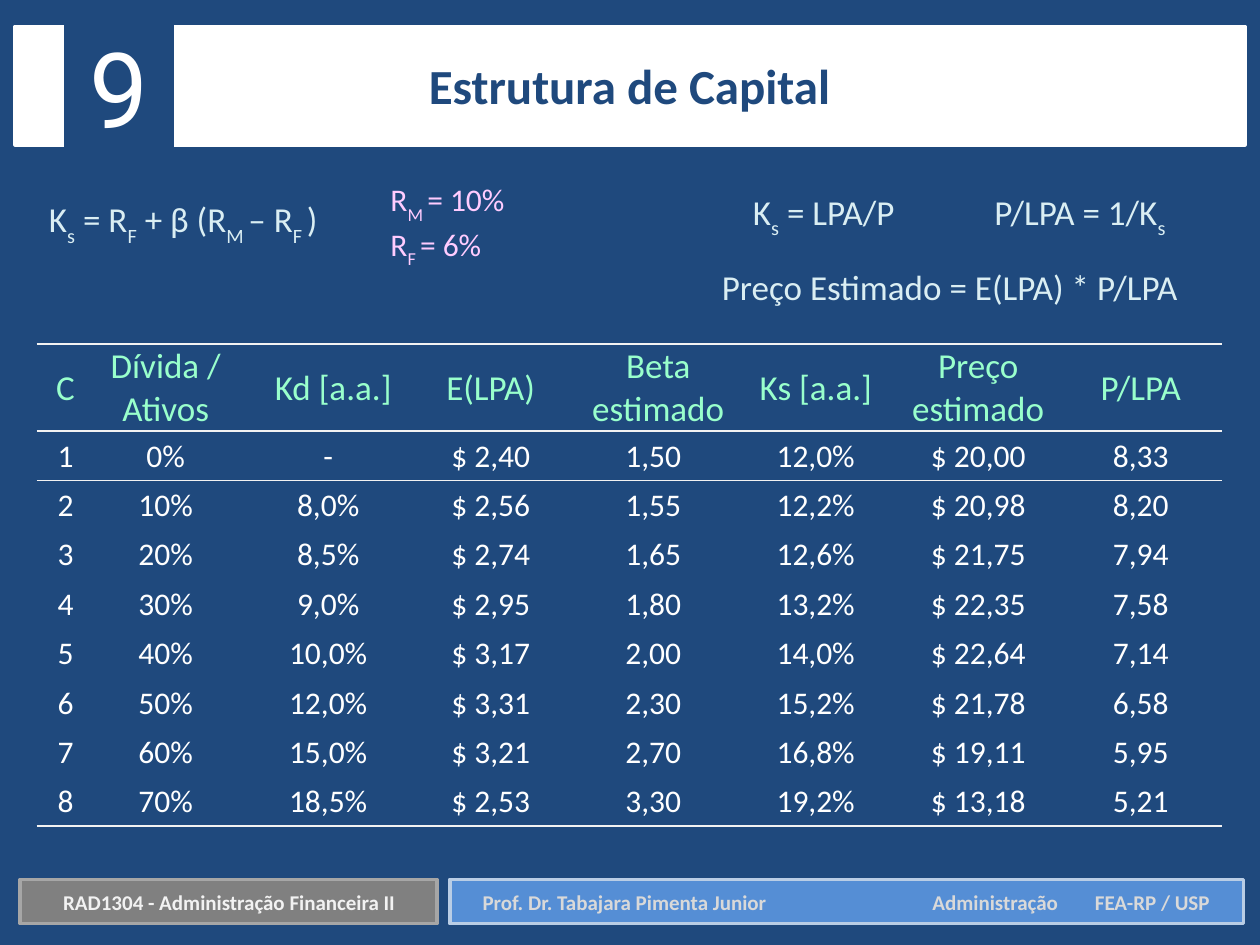
from lxml.etree import SubElement
from pptx import Presentation
from pptx.dml.color import RGBColor as RGB
from pptx.enum.shapes import MSO_SHAPE
from pptx.enum.text import MSO_ANCHOR as ANCHOR, MSO_AUTO_SIZE as AUTO, PP_ALIGN as ALIGN
from pptx.oxml import parse_xml
from pptx.oxml.ns import nsdecls, qn
from pptx.util import Inches, Pt

NAVY = RGB(0x1F, 0x49, 0x7D)
WHITE = RGB(0xFF, 0xFF, 0xFF)
OFF_WHITE = RGB(0xF2, 0xF2, 0xF2)
SILVER = RGB(0xD9, 0xD9, 0xD9)
GRAY = RGB(0x80, 0x80, 0x80)
GRAY_EDGE = RGB(0xA6, 0xA6, 0xA6)
BLUE = RGB(0x55, 0x8E, 0xD5)
BLUE_EDGE = RGB(0xB9, 0xCD, 0xE5)
ICE = RGB(0xDA, 0xEE, 0xF3)
PINK = RGB(0xFF, 0xCC, 0xFF)
MINT = RGB(0x99, 0xFF, 0xCC)

NO_STYLE_NO_GRID = "{2D5ABB26-0587-4C30-8999-92F81FD0307C}"
HEADERS = ["C", "Dívida / Ativos", "Kd [a.a.]", "E(LPA)", "Beta estimado",
           "Ks [a.a.]", "Preço estimado", "P/LPA"]
ROWS = [
    ["1", "0%", "-", "$ 2,40", "1,50", "12,0%", "$ 20,00", "8,33"],
    ["2", "10%", "8,0%", "$ 2,56", "1,55", "12,2%", "$ 20,98", "8,20"],
    ["3", "20%", "8,5%", "$ 2,74", "1,65", "12,6%", "$ 21,75", "7,94"],
    ["4", "30%", "9,0%", "$ 2,95", "1,80", "13,2%", "$ 22,35", "7,58"],
    ["5", "40%", "10,0%", "$ 3,17", "2,00", "14,0%", "$ 22,64", "7,14"],
    ["6", "50%", "12,0%", "$ 3,31", "2,30", "15,2%", "$ 21,78", "6,58"],
    ["7", "60%", "15,0%", "$ 3,21", "2,70", "16,8%", "$ 19,11", "5,95"],
    ["8", "70%", "18,5%", "$ 2,53", "3,30", "19,2%", "$ 13,18", "5,21"],
]


def write_runs(p, runs, size, color, font="Calibri", bold=False):
    """Add runs to a paragraph; every second one is a subscript."""
    for i, text in enumerate(runs):
        r = p.add_run()
        r.text = text
        r.font.size, r.font.name, r.font.bold = Pt(size), font, bold
        r.font.color.rgb = color
        if i % 2:
            r._r.get_or_add_rPr().set("baseline", "-30000")


def add_box(s, box, fill, edge=None):
    sp = s.shapes.add_shape(MSO_SHAPE.RECTANGLE, *map(Inches, box))
    sp.shadow.inherit = False
    sp.fill.solid()
    sp.fill.fore_color.rgb = fill
    if edge is None:
        sp.line.fill.background()
    else:
        sp.line.color.rgb = edge
        sp.line.width = Pt(2)
    return sp


def add_text(s, box, lines, size, color, align=ALIGN.LEFT, bold=False, wrap=True):
    tf = s.shapes.add_textbox(*map(Inches, box)).text_frame
    tf.word_wrap = wrap
    tf.auto_size = AUTO.SHAPE_TO_FIT_TEXT
    for i, runs in enumerate(lines):
        p = tf.add_paragraph() if i else tf.paragraphs[0]
        p.alignment = align
        write_runs(p, runs, size, color, bold=bold)
    return tf


def add_header(s):
    banner = add_box(s, (0.12, 0.21, 9.76, 0.94), WHITE, WHITE)
    title = s.shapes.title
    banner._element.addnext(title._element)
    title.left, title.top, title.width, title.height = map(Inches, (2.32, 0.39, 5.35, 0.57))
    tf = title.text_frame
    tf.auto_size = AUTO.NONE
    tf.vertical_anchor = ANCHOR.MIDDLE
    p = tf.paragraphs[0]
    p.alignment = ALIGN.CENTER
    write_runs(p, ["Estrutura de Capital"], 28, NAVY, bold=True)

    number = add_box(s, (0.51, 0.13, 0.87, 1.11), NAVY)
    p = number.text_frame.paragraphs[0]
    p.alignment = ALIGN.CENTER
    write_runs(p, ["9"], 60, WHITE, font="Roboto")


def add_formulas(s):
    add_text(s, (0.29, 1.52, 2.42, 0.44),
             [["K", "s", " = R", "F", " + β (R", "M ", "– R", "F ", ")"]],
             20, ICE, wrap=False)
    add_text(s, (3, 1.38, 1.35, 0.71),
             [["R", "M ", "= 10%"], ["R", "F ", "= 6%"]], 18, PINK)
    for box, runs in (
        ((5.68, 1.46, 1.78, 0.44), ["K", "s", " = LPA/P "]),
        ((7.32, 1.46, 2.54, 0.44), ["P/LPA = 1/K", "s "]),
        ((5, 2.06, 5.14, 0.44), ["Preço Estimado = E(LPA) * P/LPA "]),
    ):
        add_text(s, box, [runs], 20, ICE, ALIGN.CENTER)


def set_borders(cell, sides):
    """Rule the given sides; border elements must precede the cell's fill."""
    tc_pr = cell._tc.get_or_add_tcPr()
    for i, side in enumerate(sides):
        tc_pr.insert(i, parse_xml(
            f'<a:ln{side} {nsdecls("a")} w="12700"><a:solidFill>'
            f'<a:srgbClr val="{OFF_WHITE}"/></a:solidFill></a:ln{side}>'))


def fill_cell(cell, text, size, color, left_inset):
    cell.fill.background()
    cell.vertical_anchor = ANCHOR.MIDDLE
    cell.margin_left = Inches(left_inset)
    cell.margin_top = cell.margin_right = Inches(0.01)
    cell.margin_bottom = 0
    p = cell.text_frame.paragraphs[0]
    p.alignment = ALIGN.CENTER
    write_runs(p, [text], size, color)


def add_capital_table(s):
    height, header_height = 3.83, 0.69
    frame = s.shapes.add_table(len(ROWS) + 1, len(HEADERS),
                               *map(Inches, (0.29, 2.73, 9.41, height)))
    table = frame.table
    table.first_row = table.horz_banding = False
    table._tbl.tblPr.find(qn("a:tableStyleId")).text = NO_STYLE_NO_GRID
    for i, col in enumerate(table.columns):
        col.width = Inches(1.29 if i else 0.38)
    for i, row in enumerate(table.rows):
        row.height = Inches((height - header_height) / len(ROWS) if i else header_height)

    for i, values in enumerate([HEADERS] + ROWS):
        size, color = (18, WHITE) if i else (20, MINT)
        sides = {0: "TB", 1: "T", len(ROWS): "B"}.get(i, "")
        for j, text in enumerate(values):
            wide = j == 0 or (i == 0 and j in (2, 4))
            cell = table.cell(i, j)
            fill_cell(cell, text, size, color, 0.09 if wide else 0.01)
            set_borders(cell, sides)


def add_footer(s):
    add_box(s, (3.57, 6.98, 6.3, 0.35), BLUE, BLUE_EDGE)
    tf = add_text(s, (3.49, 7.01, 6.46, 0.3),
                  [["Prof. Dr. Tabajara Pimenta Junior\tAdministração\tFEA-RP / USP"]],
                  12, SILVER, bold=True)
    tf.margin_left = Inches(0.34)
    tabs = SubElement(tf.paragraphs[0]._p.get_or_add_pPr(), qn("a:tabLst"))
    for pos in (3.57, 4.86):
        SubElement(tabs, qn("a:tab"), pos=str(Inches(pos)), algn="l")

    add_box(s, (0.16, 6.98, 3.31, 0.35), GRAY, GRAY_EDGE)
    add_text(s, (0.21, 7.01, 3.22, 0.3), [["RAD1304 - Administração Financeira II"]],
             12, OFF_WHITE, ALIGN.CENTER, bold=True)


def main():
    prs = Presentation()
    prs.slide_width, prs.slide_height = Inches(10), Inches(7.5)
    s = prs.slides.add_slide(prs.slide_layouts[5])
    s.background.fill.solid()
    s.background.fill.fore_color.rgb = NAVY
    add_capital_table(s)
    add_header(s)
    add_footer(s)
    add_formulas(s)
    prs.save("out.pptx")


if __name__ == "__main__":
    main()
